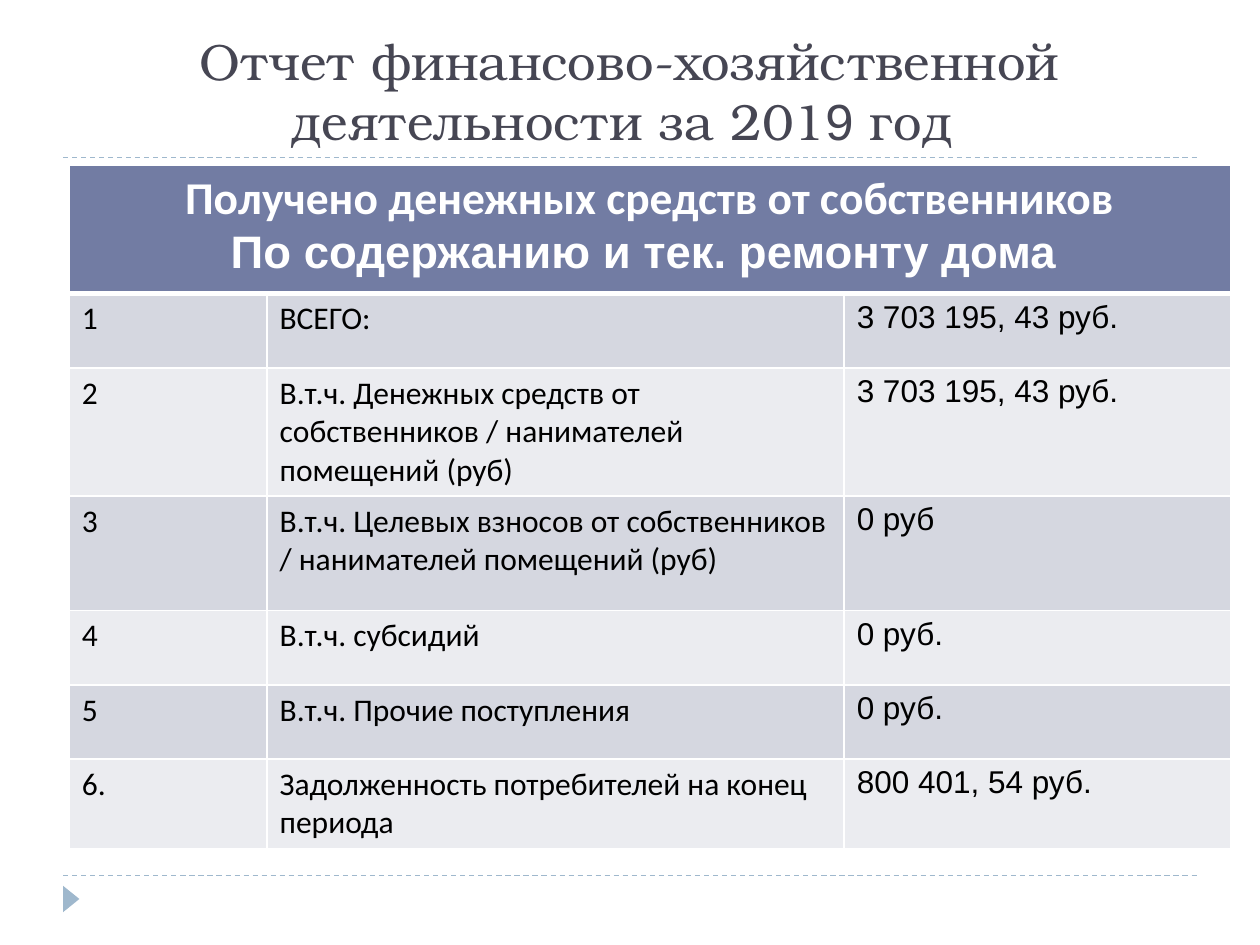
import pptx
import pptx.util
import pptx.dml.color
import pptx.enum.dml
import pptx.enum.shapes
import pptx.enum.text
import pptx.oxml.ns
from dataclasses import dataclass
from lxml import etree


@dataclass
class Theme:
    title: str = "464653"
    accent: str = "9FB8CD"
    header: str = "727CA3"
    bands: tuple = ("D5D7E0", "EBECF0")
    light: str = "FFFFFF"
    dark: str = "000000"
    serif: str = "TeX Gyre Bonum"
    sans: str = "Arial"
    body: str = "Calibri"
    title_size: int = 29
    header_size: int = 26
    body_size: int = 18


def rgb(color):
    return pptx.dml.color.RGBColor.from_string(color)


def add_text(p, text, font, size, color, bold=False, align=None):
    r = p.add_run()
    r.text = text
    r.font.name = font
    r.font.size = pptx.util.Pt(size)
    r.font.bold = bold
    r.font.color.rgb = rgb(color)
    if align is not None:
        p.alignment = align


def add_child(parent, tag, **attrs):
    return etree.SubElement(parent, pptx.oxml.ns.qn(tag), **attrs)


class Deck:
    COLS, ROWS = 20, 30
    CENTER = pptx.enum.text.PP_ALIGN.CENTER

    def __init__(self, theme):
        self.theme = theme
        self.prs = pptx.Presentation()
        self.prs.slide_width = pptx.util.Inches(10)
        self.prs.slide_height = pptx.util.Inches(7.5)
        self.s = self.prs.slides.add_slide(self.prs.slide_layouts[5])

    def x(self, cols):
        return round(self.prs.slide_width * cols / self.COLS)

    def y(self, rows):
        return round(self.prs.slide_height * rows / self.ROWS)

    def box(self, col, row, cols, rows):
        return self.x(col), self.y(row), self.x(cols), self.y(rows)

    def title(self, box, runs):
        sp = self.s.shapes.title
        sp.left, sp.top, sp.width, sp.height = self.box(*box)
        tf = sp.text_frame
        tf.word_wrap = True
        tf.auto_size = pptx.enum.text.MSO_AUTO_SIZE.NONE
        tf.vertical_anchor = pptx.enum.text.MSO_ANCHOR.BOTTOM
        for text, font in runs:
            add_text(tf.paragraphs[0], text, font, self.theme.title_size,
                     self.theme.title, align=self.CENTER)

    def rule(self, row, start=1, end=19):
        line = self.s.shapes.add_connector(
            pptx.enum.shapes.MSO_CONNECTOR.STRAIGHT,
            self.x(start), self.y(row), self.x(end), self.y(row))
        line.line.color.rgb = rgb(self.theme.accent)
        line.line.width = pptx.util.Pt(0.75)
        line.line.dash_style = pptx.enum.dml.MSO_LINE.DASH
        add_child(line._element.spPr, "a:effectLst")

    def marker(self, box):
        sp = self.s.shapes.add_shape(
            pptx.enum.shapes.MSO_SHAPE.ISOSCELES_TRIANGLE, *self.box(*box))
        sp.rotation = 90
        sp.shadow.inherit = False
        sp.fill.solid()
        sp.fill.fore_color.rgb = rgb(self.theme.accent)
        sp.line.fill.background()

    def paint(self, cell, fill, top=1, bottom=1):
        tcPr = cell._tc.get_or_add_tcPr()
        for side, width in (("L", 1), ("R", 1), ("T", top), ("B", bottom)):
            ln = add_child(tcPr, f"a:ln{side}", w=str(pptx.util.Pt(width)))
            add_child(add_child(ln, "a:solidFill"), "a:srgbClr", val=self.theme.light)
        cell.fill.solid()
        cell.fill.fore_color.rgb = rgb(fill)

    def table(self, col, row, widths, heights, heading, records):
        t = self.theme
        box = self.box(col, row, sum(widths), sum(heights))
        table = self.s.shapes.add_table(len(heights), len(widths), *box).table
        for column, width in zip(table.columns, widths):
            column.width = self.x(width)
        for line, height in zip(table.rows, heights):
            line.height = self.y(height)

        for c in range(len(widths)):
            self.paint(table.cell(0, c), t.header, bottom=3)
        head = table.cell(0, 0)
        head.merge(table.cell(0, len(widths) - 1))
        tf = head.text_frame
        for i, (text, font) in enumerate(heading):
            p = tf.add_paragraph() if i else tf.paragraphs[0]
            add_text(p, text, font, t.header_size, t.light, True, self.CENTER)

        fonts = (t.body, t.body, t.sans)
        for i, record in enumerate(records):
            for c, (text, font) in enumerate(zip(record, fonts)):
                cell = table.cell(i + 1, c)
                self.paint(cell, t.bands[i % 2], top=1 if i else 3)
                add_text(cell.text_frame.paragraphs[0], text, font, t.body_size, t.dark)


def main():
    t = Theme()
    deck = Deck(t)
    deck.rule(27.8)
    deck.rule(5)
    deck.marker((0.92, 28.28, 0.42, 0.52))
    deck.title((1, 1, 18, 4), [
        ("Отчет финансово-хозяйственной деятельности за 201", t.serif),
        ("9", t.sans),
        (" год ", t.serif),
    ])
    deck.table(
        1.1, 5.24,
        widths=(3.14, 9.16, 6.14),
        heights=(4.08, 2.36, 3.64, 3.64, 2.36, 2.36, 2.56),
        heading=[
            ("Получено денежных средств от собственников", t.body),
            ("По содержанию и тек. ремонту дома ", t.sans),
        ],
        records=[
            ("1", "ВСЕГО:", "3 703 195, 43 руб."),
            ("2", "В.т.ч. Денежных средств от собственников / нанимателей помещений (руб)",
             "3 703 195, 43 руб."),
            ("3", "В.т.ч. Целевых взносов от собственников / нанимателей помещений (руб)",
             "0 руб"),
            ("4", "В.т.ч. субсидий", "0 руб."),
            ("5", "В.т.ч. Прочие поступления", "0 руб."),
            ("6.", "Задолженность потребителей на конец периода", "800 401, 54 руб."),
        ])
    deck.prs.save("out.pptx")


if __name__ == "__main__":
    main()
